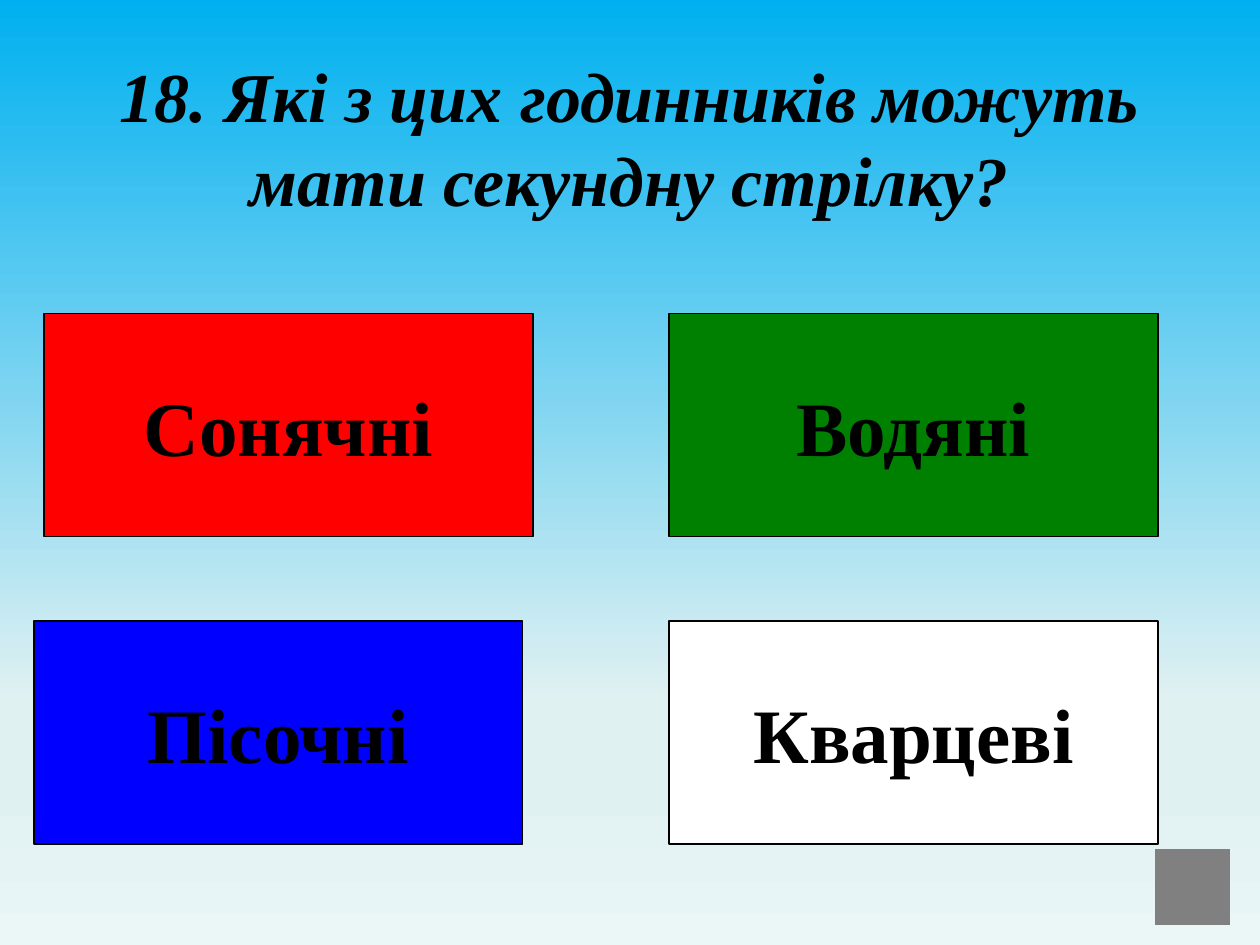
from dataclasses import dataclass

from lxml import etree
from pptx import Presentation
from pptx.dml.color import RGBColor
from pptx.enum.shapes import MSO_SHAPE
from pptx.enum.text import MSO_ANCHOR, PP_ALIGN
from pptx.oxml.ns import qn
from pptx.util import Inches, Pt

RECT = MSO_SHAPE.RECTANGLE
BUTTON = MSO_SHAPE.ACTION_BUTTON_CUSTOM
MIDDLE = MSO_ANCHOR.MIDDLE
CENTER = PP_ALIGN.CENTER

BLACK = "000000"
SKY = [(0, "00B0F0"), (74, "E0F1F2"), (83, "E0F1F2"), (100, "EBF6F7")]
TITLE_FONT = {"name": "Times New Roman", "size": Pt(40), "bold": True, "italic": True}
ANSWER_FONT = {"name": "Times New Roman", "size": Pt(44), "bold": True}

ANSWER_W, ANSWER_H = 3.88, 1.77
ROW_1, ROW_2 = 2.49, 4.93
RIGHT_COL = 5.31


@dataclass
class Answer:
    text: str
    left: float
    top: float
    fill: str


ANSWERS = [
    Answer("Сонячні", 0.35, ROW_1, "FF0000"),
    Answer("Водяні", RIGHT_COL, ROW_1, "008000"),
    Answer("Пісочні", 0.27, ROW_2, "0000FF"),
    Answer("Кварцеві", RIGHT_COL, ROW_2, "FFFFFF"),
]


def rgb(value: str) -> RGBColor:
    return RGBColor.from_string(value)


def set_background(s, stops: list) -> None:
    """Fill the slide with a top-to-bottom gradient of (percent, colour) stops."""
    fill = s.background.fill
    fill.gradient()
    fill.gradient_angle = 270
    stop_list = next(s.element.iter(qn("a:gsLst")))
    for old in list(stop_list):
        stop_list.remove(old)
    for percent, color in stops:
        stop = etree.SubElement(stop_list, qn("a:gs"), pos=str(percent * 1000))
        etree.SubElement(stop, qn("a:srgbClr"), val=color)


def write_text(sp, text: str, font: dict, wrap: bool) -> None:
    tf = sp.text_frame
    tf.word_wrap = wrap
    tf.vertical_anchor = MIDDLE
    p = tf.paragraphs[0]
    p.alignment = CENTER
    r = p.add_run()
    r.text = text
    for name, value in font.items():
        setattr(r.font, name, value)
    r.font.color.rgb = rgb(BLACK)


def add_block(s, kind, left: float, top: float, width: float, height: float, fill: str):
    sp = s.shapes.add_shape(kind, Inches(left), Inches(top), Inches(width), Inches(height))
    sp.shadow.inherit = False
    sp.fill.solid()
    sp.fill.fore_color.rgb = rgb(fill)
    sp.line.fill.background()
    return sp


def add_answer(s, answer: Answer) -> None:
    sp = add_block(s, RECT, answer.left, answer.top, ANSWER_W, ANSWER_H, answer.fill)
    sp.line.color.rgb = rgb(BLACK)
    sp.line.width = Pt(0.75)
    write_text(sp, answer.text, ANSWER_FONT, wrap=False)


def main() -> None:
    prs = Presentation()
    prs.slide_width, prs.slide_height = Inches(10), Inches(7.5)
    s = prs.slides.add_slide(prs.slide_layouts[6])
    set_background(s, SKY)

    title = s.shapes.add_textbox(Inches(0.5), Inches(0.3), Inches(8.99), Inches(1.56))
    write_text(title, "18. Які з цих годинників можуть мати секундну стрілку?", TITLE_FONT, wrap=True)

    for answer in ANSWERS:
        add_answer(s, answer)
    add_block(s, BUTTON, 9.17, 6.74, 0.59, 0.6, "808080")

    prs.save("out.pptx")


if __name__ == "__main__":
    main()
